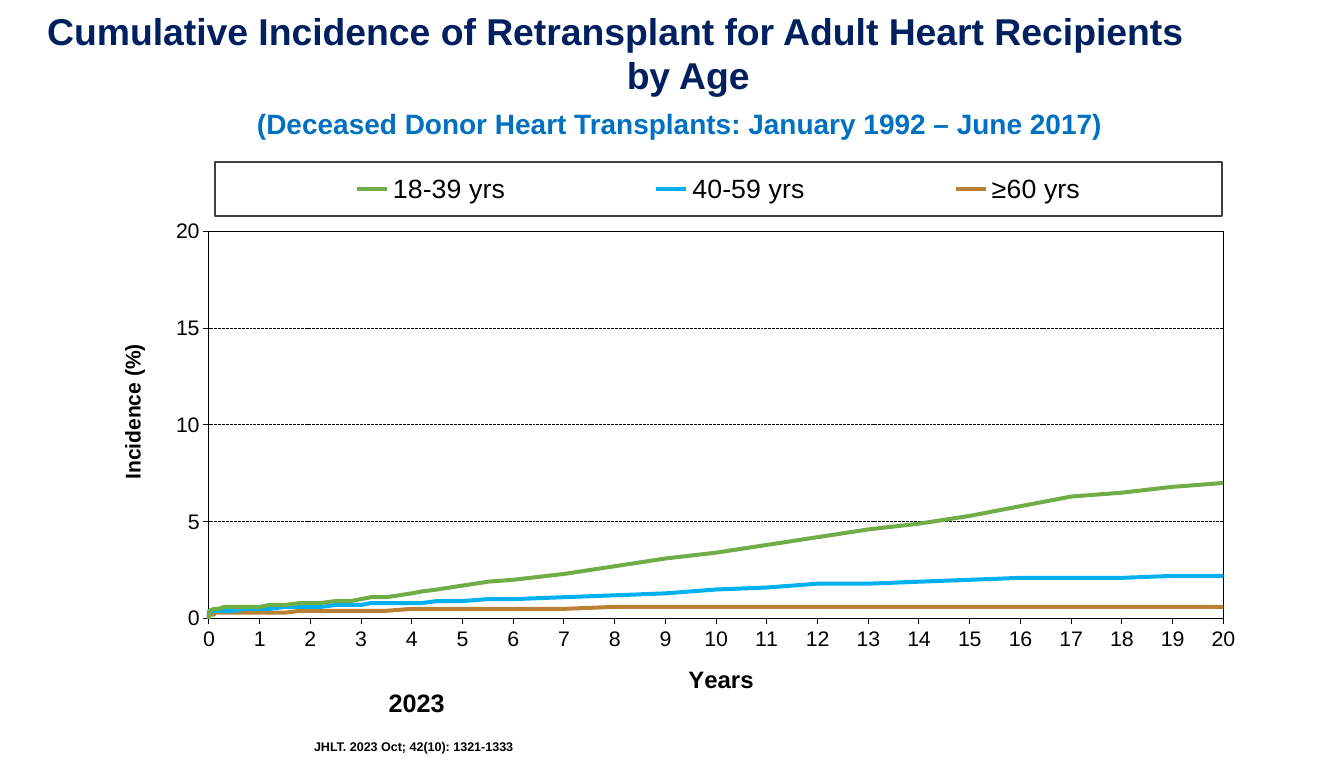
from lxml.etree import SubElement
from pptx import Presentation
from pptx.chart.data import XyChartData
from pptx.dml.color import RGBColor
from pptx.enum.chart import XL_CHART_TYPE, XL_LEGEND_POSITION, XL_TICK_MARK
from pptx.enum.dml import MSO_LINE
from pptx.enum.text import MSO_ANCHOR, PP_ALIGN
from pptx.oxml import parse_xml
from pptx.oxml.ns import nsdecls, qn
from pptx.util import Cm, Pt

TITLE = ["Cumulative Incidence of Retransplant for Adult Heart Recipients", "by Age"]
SUBTITLE = "(Deceased Donor Heart Transplants: January 1992 – June 2017)"
YEAR = "2023"
CITATION = "JHLT. 2023 Oct; 42(10): 1321-1333"

AXIS_MAXIMUM = 20
EARLY_YEARS = [0, 0, 0, 0.1, 0.1, 0.2, 0.2, 0.3, 0.5, 0.7, 1, 1.2, 1.5, 1.8, 2,
               2.2, 2.5, 2.8, 3, 3.2, 3.5, 4, 4.2, 4.5, 5, 5.5]
YEARS = EARLY_YEARS + list(range(6, AXIS_MAXIMUM + 1))
INCIDENCE = {
    "18-39 yrs": [
        0, 0.4, 0.4, 0.5, 0.5, 0.5, 0.5, 0.6, 0.6, 0.6, 0.6, 0.7, 0.7, 0.8, 0.8,
        0.8, 0.9, 0.9, 1, 1.1, 1.1, 1.3, 1.4, 1.5, 1.7, 1.9, 2, 2.3, 2.7, 3.1,
        3.4, 3.8, 4.2, 4.6, 4.9, 5.3, 5.8, 6.3, 6.5, 6.8, 7],
    "40-59 yrs": [
        0, 0.3, 0.3, 0.4, 0.4, 0.4, 0.4, 0.4, 0.4, 0.5, 0.5, 0.5, 0.6, 0.6, 0.6,
        0.6, 0.7, 0.7, 0.7, 0.8, 0.8, 0.8, 0.8, 0.9, 0.9, 1, 1, 1.1, 1.2, 1.3,
        1.5, 1.6, 1.8, 1.8, 1.9, 2, 2.1, 2.1, 2.1, 2.2, 2.2],
    "≥60 yrs": [0] + [0.2] * 3 + [0.3] * 9 + [0.4] * 8 + [0.5] * 7 + [0.6] * 13,
}
# title, size key, major unit, title position in percent of the chart
YEARS_AXIS = ("Years", "years_title", 1, (48.6, 94))
INCIDENCE_AXIS = ("Incidence (%)", "axis", 5, (0, 37))
LEGEND_PLACE = (8.5, 4.7, 86.1, 9.7)
PLOT_PLACE = (8, 17.1, 86.7, 69.5)

THEME = {
    "font": "Arial",
    "black": "000000", "white": "FFFFFF", "legend_line": "404040",
    "title": "002060", "subtitle": "0070C0",
    "series": ["70AD47", "00B0F0", "BA8036"],
    "sizes": {"title": 28, "subtitle": 21, "year": 18.9, "citation": 9.4,
              "years_title": 18, "axis": 16, "legend": 20},
}


def color(name):
    return RGBColor.from_string(THEME.get(name, name))


def style_font(font, size, color_name="black", bold=True):
    font.name = THEME["font"]
    font.size = Pt(THEME["sizes"][size])
    font.bold = bold
    font.color.rgb = color(color_name)


def style_line(line, color_name="black", width=0.75):
    line.color.rgb = color(color_name)
    line.width = Pt(width)


def add_text(page, place, lines, size, color_name="black", align=PP_ALIGN.LEFT):
    box = page.shapes.add_textbox(*(Cm(length) for length in place))
    box.text_frame.word_wrap = True
    box.text_frame.text = "\n".join(lines)
    for para in box.text_frame.paragraphs:
        para.alignment = align
        for span in para.runs:
            style_font(span.font, size, color_name)
    return box


def place_part(part, index, position, inner=False):
    """Give a chart part a manual layout: x, y and optionally w, h in percent."""
    for old in part.findall(qn("c:layout")):
        part.remove(old)
    layout = parse_xml(f"<c:layout {nsdecls('c')}><c:manualLayout/></c:layout>")
    manual = layout[0]
    if inner:
        SubElement(manual, qn("c:layoutTarget")).set("val", "inner")
    for mode in ("xMode", "yMode"):
        SubElement(manual, qn(f"c:{mode}")).set("val", "edge")
    for key, percent in zip("xywh", position):
        SubElement(manual, qn(f"c:{key}")).set("val", str(percent / 100))
    part.insert(index, layout)


def outline(color_name, width):
    return parse_xml(
        f'<c:spPr {nsdecls("c", "a")}><a:noFill/><a:ln w="{Pt(width)}"><a:solidFill>'
        f'<a:srgbClr val="{THEME[color_name]}"/></a:solidFill></a:ln></c:spPr>')


def style_axis(axis, title, title_size, major_unit, title_position):
    axis.minimum_scale, axis.maximum_scale = 0, AXIS_MAXIMUM
    axis.major_unit = major_unit
    axis.has_major_gridlines = False
    axis.major_tick_mark = XL_TICK_MARK.OUTSIDE
    axis.minor_tick_mark = XL_TICK_MARK.NONE
    axis.tick_labels.number_format = "#,##0"
    axis.tick_labels.number_format_is_linked = False
    style_font(axis.tick_labels.font, "axis", bold=False)
    style_line(axis.format.line)
    frame = axis.axis_title.text_frame
    frame.text = title
    style_font(frame.paragraphs[0].runs[0].font, title_size)
    place_part(axis.axis_title._element, 1, title_position)


def add_incidence_chart(page):
    data = XyChartData()
    for name, values in INCIDENCE.items():
        series = data.add_series(name)
        for year, value in zip(YEARS, values):
            series.add_data_point(year, value)
    chart = page.shapes.add_chart(
        XL_CHART_TYPE.XY_SCATTER_LINES_NO_MARKERS,
        Cm(3.05), Cm(3.6), Cm(30.96), Cm(14.94), data).chart
    chart.has_title = False
    style_font(chart.font, "years_title", bold=False)
    chart.plots[0].vary_by_categories = False
    for series, line_color in zip(chart.plots[0].series, THEME["series"]):
        series.smooth = False
        style_line(series.format.line, line_color, 3)

    style_axis(chart.category_axis, *YEARS_AXIS)
    style_axis(chart.value_axis, *INCIDENCE_AXIS)
    chart.value_axis.has_major_gridlines = True
    grid = chart.value_axis.major_gridlines.format.line
    style_line(grid)
    grid.dash_style = MSO_LINE.SQUARE_DOT

    chart.has_legend = True
    legend = chart.legend
    legend.position = XL_LEGEND_POSITION.TOP
    legend.include_in_layout = True
    style_font(legend.font, "legend", bold=False)
    place_part(legend._element, 1, LEGEND_PLACE)
    legend._element.find(qn("c:txPr")).addprevious(outline("legend_line", 1.25))

    plot_area = chart._chartSpace.chart.plotArea
    place_part(plot_area, 0, PLOT_PLACE, inner=True)
    plot_area.append(outline("black", 0.75))


def main():
    deck = Presentation()
    deck.slide_width, deck.slide_height = Cm(35.56), Cm(20.32)
    page = deck.slides.add_slide(deck.slide_layouts[6])

    add_text(page, (8.41, 18.06, 5.23, 1.07), [YEAR], "year", align=PP_ALIGN.CENTER)
    citation = add_text(page, (8.23, 19.43, 5.66, 0.66), [CITATION], "citation")
    style_line(citation.line, "white")
    citation.text_frame.vertical_anchor = MSO_ANCHOR.MIDDLE
    citation.text_frame.margin_left, citation.text_frame.margin_right = Cm(0.08), 0

    add_incidence_chart(page)

    title = add_text(page, (0.43, 0.08, 35.56, 2.67), TITLE, "title", "title", PP_ALIGN.CENTER)
    first_line = title.text_frame.paragraphs[0]
    first_line.alignment = PP_ALIGN.LEFT
    first_line._p.get_or_add_pPr().set("marL", str(Cm(0.57)))
    add_text(page, (6.55, 2.69, 25.2, 1.14), [SUBTITLE], "subtitle", "subtitle")

    deck.save("out.pptx")


if __name__ == "__main__":
    main()
